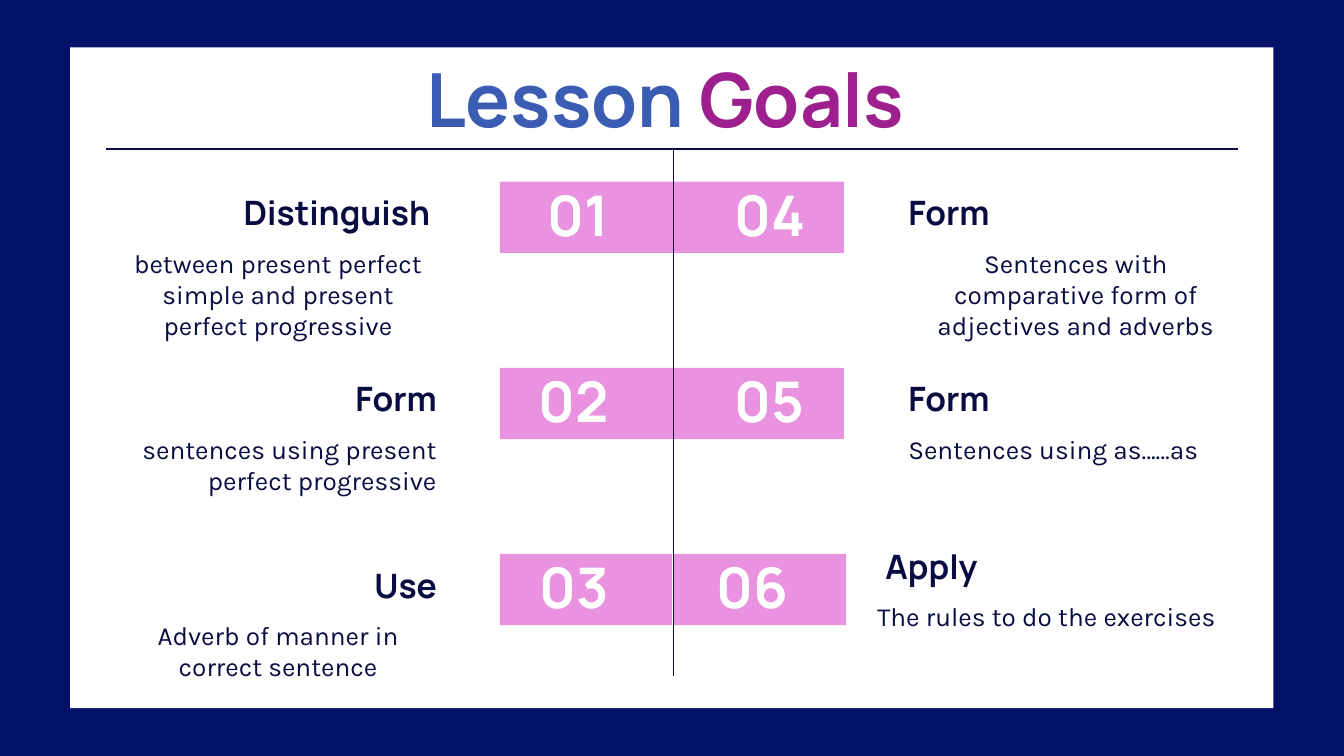
from dataclasses import dataclass

from lxml import etree
from pptx import Presentation
from pptx import util as u
from pptx.dml.color import RGBColor
from pptx.enum import shapes, text
from pptx.oxml.ns import qn

LEFT, CENTER, RIGHT = text.PP_ALIGN.LEFT, text.PP_ALIGN.CENTER, text.PP_ALIGN.RIGHT
TOP, MIDDLE, BOTTOM = text.MSO_ANCHOR.TOP, text.MSO_ANCHOR.MIDDLE, text.MSO_ANCHOR.BOTTOM


@dataclass(frozen=True)
class Theme:
    navy: str = "031267"
    ink: str = "080C41"
    white: str = "FFFFFF"
    pink: str = "E992DF"
    blue: str = "3B5CB3"
    purple: str = "9E208F"
    display: str = "Manrope"
    body: str = "Karla"
    title_size: float = 40
    number_size: float = 30
    heading_size: float = 18
    detail_size: float = 14


@dataclass(frozen=True)
class Area:
    left: float
    top: float
    width: float
    height: float


@dataclass(frozen=True)
class Style:
    font: str
    size: float
    color: str
    bold: bool
    anchor: text.MSO_ANCHOR
    space_after: float = 0


@dataclass(frozen=True)
class Goal:
    number: str
    heading: str
    detail: str
    row: int
    align: text.PP_ALIGN
    detail_align: text.PP_ALIGN
    number_align: text.PP_ALIGN
    number_left: float
    heading_left: float
    detail_left: float
    detail_width: float = 184.32
    lift: float = 0


THEME = Theme()
TITLE = Style(THEME.display, THEME.title_size, THEME.blue, True, MIDDLE)
NUMBER = Style(THEME.display, THEME.number_size, THEME.white, True, BOTTOM)
HEADING = Style(THEME.display, THEME.heading_size, THEME.ink, True, MIDDLE)
DETAIL = Style(THEME.body, THEME.detail_size, THEME.ink, False, TOP, 16)

# Grid: three rows on either side of the centre line
ROW_TOP, ROW_STEP = 92.88, 99.72
COLUMN = 184.32
MARGIN, BAND_LEFT, NUMBER_LEFT = 56.88, 267.84, 259.92
RIGHT_NUMBER, RIGHT_TEXT = 386.64, 479.52
RULE_TOP, CENTER_LINE = 79.92, 360.72


def left_goal(number: str, heading: str, detail: str, row: int,
              detail_align: text.PP_ALIGN = CENTER) -> Goal:
    return Goal(number, heading, detail, row, RIGHT, detail_align, RIGHT,
                NUMBER_LEFT, MARGIN, MARGIN)


GOALS = [
    left_goal("01", "Distinguish ",
              "between present perfect simple and present perfect progressive", 0),
    left_goal("02", "Form", "sentences using present perfect progressive", 1, RIGHT),
    left_goal("03", "Use", "Adverb of manner in correct sentence", 2),
    Goal("04", "Form", "Sentences with comparative form of adjectives and adverbs", 0,
         LEFT, CENTER, LEFT, RIGHT_NUMBER, RIGHT_TEXT, RIGHT_TEXT, 193.68),
    Goal("05", "Form", "Sentences using as……as", 1,
         LEFT, LEFT, LEFT, RIGHT_NUMBER, RIGHT_TEXT, RIGHT_TEXT),
    Goal("06", "Apply", "The rules to do the exercises", 2,
         LEFT, LEFT, RIGHT, 355.68, 467.28, 462.96, 203.76, 10),
]


def apply(target: object, values: dict) -> None:
    for name, value in values.items():
        setattr(target, name, value)


def row_top(row: int) -> float:
    return ROW_TOP + row * ROW_STEP


def points(area: Area) -> list:
    return [u.Pt(value) for value in (area.left, area.top, area.width, area.height)]


def add_block(page, area: Area, color: str) -> None:
    block = page.shapes.add_shape(shapes.MSO_SHAPE.RECTANGLE, *points(area))
    block.shadow.inherit = False
    block.fill.solid()
    block.fill.fore_color.rgb = RGBColor.from_string(color)
    block.line.fill.background()


def add_rule(page, start: tuple[float, float], end: tuple[float, float]) -> None:
    rule = page.shapes.add_connector(
        shapes.MSO_CONNECTOR.STRAIGHT, *(u.Pt(value) for value in start + end))
    rule.line.width = u.Pt(0.75)
    rule.line.color.rgb = RGBColor.from_string(THEME.ink)
    etree.SubElement(rule._element.spPr, qn("a:effectLst"))


def write(box, spans: list[tuple[str, str]], style: Style, align: text.PP_ALIGN) -> None:
    frame = box.text_frame
    inset = u.Pt(7.2)
    apply(frame, {"word_wrap": True, "auto_size": text.MSO_AUTO_SIZE.NONE,
                  "vertical_anchor": style.anchor,
                  "margin_left": inset, "margin_right": inset,
                  "margin_top": inset, "margin_bottom": inset})
    para = frame.paragraphs[0]
    apply(para, {"alignment": align, "space_before": u.Pt(0),
                 "space_after": u.Pt(style.space_after)})
    for words, color in spans:
        span = para.add_run()
        span.text = words
        apply(span.font, {"name": style.font, "size": u.Pt(style.size), "bold": style.bold})
        span.font.color.rgb = RGBColor.from_string(color)


def add_text(page, area: Area, words: str, style: Style, align: text.PP_ALIGN) -> None:
    box = page.shapes.add_textbox(*points(area))
    write(box, [(words, style.color)], style, align)


def add_goal(page, goal: Goal) -> None:
    top = row_top(goal.row)
    add_text(page, Area(goal.number_left, top, 73.44, 46.8),
             goal.number, NUMBER, goal.number_align)
    top -= goal.lift
    add_text(page, Area(goal.heading_left, top, COLUMN, 41.76),
             goal.heading, HEADING, goal.align)
    add_text(page, Area(goal.detail_left, top + 32.2, goal.detail_width, 38.16),
             goal.detail, DETAIL, goal.detail_align)


def main() -> None:
    deck = Presentation()
    apply(deck, {"slide_width": u.Pt(720), "slide_height": u.Pt(405)})
    page = deck.slides.add_slide(deck.slide_layouts[5])
    page.background.fill.solid()
    page.background.fill.fore_color.rgb = RGBColor.from_string(THEME.navy)

    # White panel and header rule
    add_block(page, Area(37.6, 25.4, 644.6, 354), THEME.white)
    add_rule(page, (MARGIN, RULE_TOP), (663.12, RULE_TOP))

    # Title, brought in front of the panel
    title = page.shapes.title
    page.shapes._spTree.append(title._element)
    left, top, width, height = points(Area(MARGIN, 30.24, 606.96, 44.64))
    apply(title, {"left": left, "top": top, "width": width, "height": height})
    write(title, [("Lesson ", THEME.blue), ("Goals ", THEME.purple)], TITLE, CENTER)

    # Number bands; the last row is split at the centre line
    for row, band_left, width in [(0, BAND_LEFT, COLUMN), (1, BAND_LEFT, COLUMN),
                                  (2, BAND_LEFT, COLUMN / 2), (2, 361.2, COLUMN / 2)]:
        add_block(page, Area(band_left, row_top(row) + 4.5, width, 38.16), THEME.pink)
    add_rule(page, (CENTER_LINE, RULE_TOP), (CENTER_LINE, 362.16))

    # Goals
    for goal in GOALS:
        add_goal(page, goal)

    deck.save("out.pptx")


if __name__ == "__main__":
    main()
